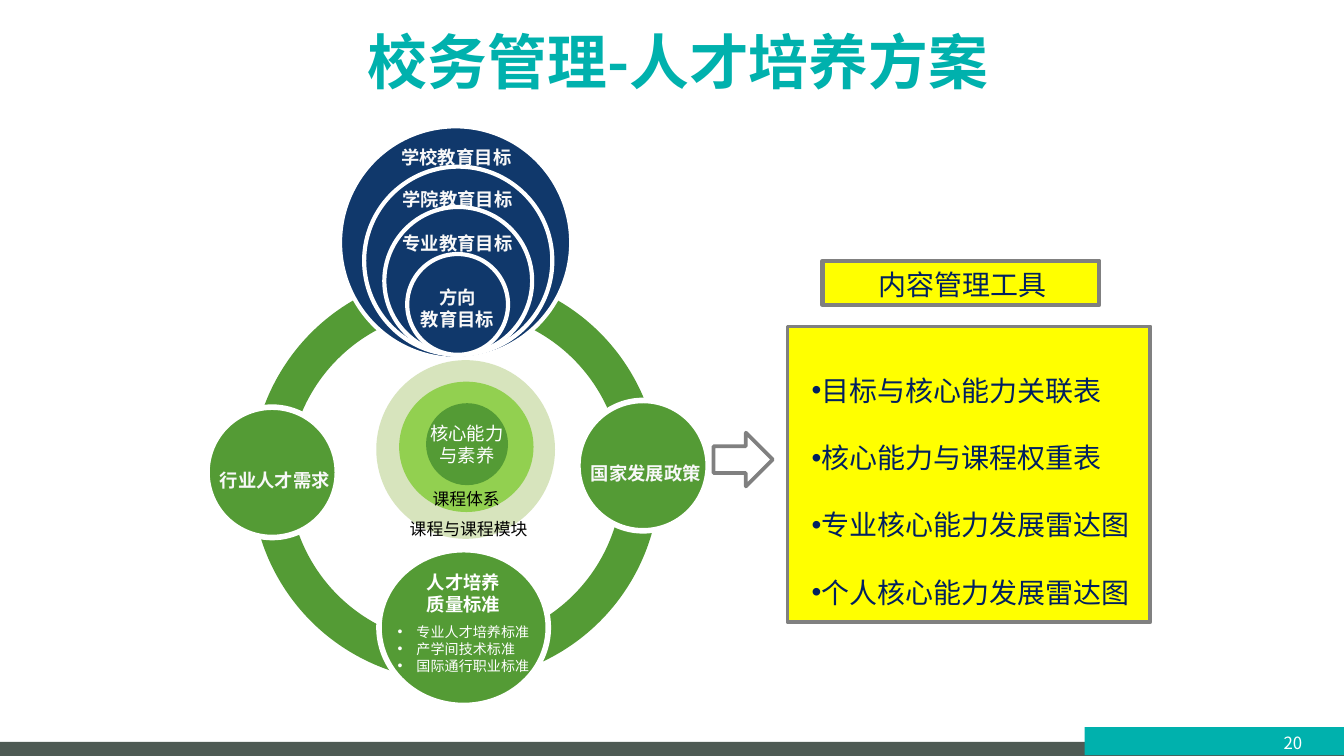
"""Build the talent training programme slide: a ring of goals, needs and standards beside its tools."""
from dataclasses import dataclass

from lxml.etree import SubElement
from pptx import Presentation
from pptx.dml.color import RGBColor
from pptx.enum.shapes import MSO_SHAPE as Shape
from pptx.enum.text import MSO_ANCHOR as Anchor, PP_ALIGN as Align
from pptx.oxml.ns import qn
from pptx.util import Inches, Pt


@dataclass(frozen=True)
class Theme:
    font: str = "Noto Sans CJK SC"
    bullet_font: str = "Arial"
    teal: str = "00B1AD"
    slate: str = "4E5A54"
    green: str = "549B35"
    lime: str = "92D050"
    pale: str = "D7E4BD"
    navy: str = "10386B"
    ink: str = "002060"
    yellow: str = "FFFF00"
    grey: str = "808080"
    white: str = "FFFFFF"
    soft: str = "F8F8F8"
    black: str = "000000"
    title: float = 32
    tool: float = 15
    label: float = 9.8
    small: float = 9
    bullet: float = 7.5


theme = Theme()
deck = Presentation()
deck.slide_width = Inches(10)
deck.slide_height = deck.slide_width * 9 // 16
page = deck.slides.add_slide(deck.slide_layouts[6])


def add_figure(kind, place, fill=None, line=None, weight=0):
    figure = page.shapes.add_shape(kind, *map(Inches, place))
    figure.shadow.inherit = False
    if fill:
        figure.fill.solid()
        figure.fill.fore_color.rgb = RGBColor.from_string(fill)
    else:
        figure.fill.background()
    if line:
        figure.line.color.rgb = RGBColor.from_string(line)
        figure.line.width = Pt(weight)
    else:
        figure.line.fill.background()


def add_text(place, lines, size, color, bold=False, align=Align.CENTER, anchor=Anchor.TOP,
             wrap=True, bullet=False, hang=0, spacing=None):
    frame = page.shapes.add_textbox(*map(Inches, place)).text_frame
    frame.word_wrap = wrap
    frame.vertical_anchor = anchor
    frame.text = "\n".join(lines)
    for para in frame.paragraphs:
        para.alignment = align
        if spacing:
            para.line_spacing = spacing
        if bullet:
            layout = para._p.get_or_add_pPr()
            layout.set("marL", str(Inches(hang)))
            layout.set("indent", str(-Inches(hang)))
            tint = SubElement(layout, qn("a:buClr"))
            SubElement(tint, qn("a:srgbClr")).set("val", color)
            SubElement(layout, qn("a:buFont")).set("typeface", theme.bullet_font)
            SubElement(layout, qn("a:buChar")).set("char", "•")
        para.font.size = Pt(size)
        para.font.bold = bold
        para.font.color.rgb = RGBColor.from_string(color)
        para.font.name = theme.font
        SubElement(para.font._rPr, qn("a:ea")).set("typeface", theme.font)


add_figure(Shape.RECTANGLE, (0, 5.52, 10, 0.11), theme.slate)
add_figure(Shape.RECTANGLE, (8.07, 5.41, 1.93, 0.21), theme.teal)
add_text((9.33, 5.38, 0.58, 0.3), ["20"], theme.small, theme.white, anchor=Anchor.MIDDLE)
add_text((0.59, -0.02, 8.91, 0.94), ["校务管理-人才培养方案"], theme.title, theme.teal,
         bold=True, anchor=Anchor.MIDDLE)

add_figure(Shape.OVAL, (2.01, 2.17, 2.76, 2.76), line=theme.green, weight=20)

goals = [
    ((2.53, 0.94, 1.72, 1.73), (2.77, 1.04, 1.25, 0.27), ["学校教育目标"]),
    ((2.71, 1.24, 1.4, 1.4), (2.8, 1.35, 1.21, 0.27), ["学院教育目标"]),
    ((2.86, 1.54, 1.1, 1.1), (2.8, 1.68, 1.21, 0.27), ["专业教育目标"]),
    ((3.03, 1.89, 0.75, 0.75), (2.8, 2.08, 1.21, 0.43), ["方向", "教育目标"]),
]
for circle, place, lines in goals:
    add_figure(Shape.OVAL, circle, theme.navy, theme.white, 2.25)
    add_text(place, lines, theme.label, theme.soft, bold=True)

for left, top, need in [(4.3, 2.98, "国家发展政策"), (1.54, 3.03, "行业人才需求")]:
    add_figure(Shape.OVAL, (left, top, 0.97, 0.97), theme.green, theme.white, 3)
    add_text((left - 0.02, top + 0.41, 1.05, 0.27), [need], theme.label, theme.soft, bold=True)

add_figure(Shape.OVAL, (2.82, 4.09, 1.26, 1.16), theme.green, theme.white, 3)
add_text((2.83, 4.2, 1.24, 0.43), ["人才培养", "质量标准"], theme.label, theme.white, bold=True)
add_text((2.86, 4.59, 1.19, 0.48), ["专业人才培养标准", "产学间技术标准", "国际通行职业标准"],
         theme.bullet, theme.white, align=Align.LEFT, bullet=True, hang=0.14)

add_figure(Shape.OVAL, (2.8, 2.68, 1.33, 1.33), theme.pale)
add_figure(Shape.OVAL, (2.97, 2.84, 1, 0.97), theme.lime)
add_figure(Shape.OVAL, (3.17, 3, 0.61, 0.61), theme.green)
add_text((3.06, 3.09, 0.83, 0.43), ["核心能力", "与素养"], theme.label, theme.white)
for place, course in [((3.12, 3.59, 0.71, 0.25), "课程体系"),
                      ((2.95, 3.81, 1.09, 0.25), "课程与课程模块")]:
    add_text(place, [course], theme.small, theme.black, align=Align.LEFT, wrap=False)

add_figure(Shape.RIGHT_ARROW, (5.31, 3.22, 0.44, 0.4), line=theme.grey, weight=2)
add_figure(Shape.RECTANGLE, (6.12, 1.94, 2.06, 0.33), theme.yellow, theme.grey, 2.25)
add_text((6.44, 1.94, 1.46, 0.35), ["内容管理工具"], theme.tool, theme.ink,
         align=Align.LEFT, wrap=False)
add_figure(Shape.RECTANGLE, (5.86, 2.43, 2.7, 2.2), theme.yellow, theme.grey, 2)
tools = ["目标与核心能力关联表", "核心能力与课程权重表", "专业核心能力发展雷达图", "个人核心能力发展雷达图"]
add_text((5.94, 2.48, 2.73, 2.12), tools, theme.tool, theme.ink, align=Align.LEFT,
         bullet=True, spacing=2.0)

deck.save("out.pptx")
